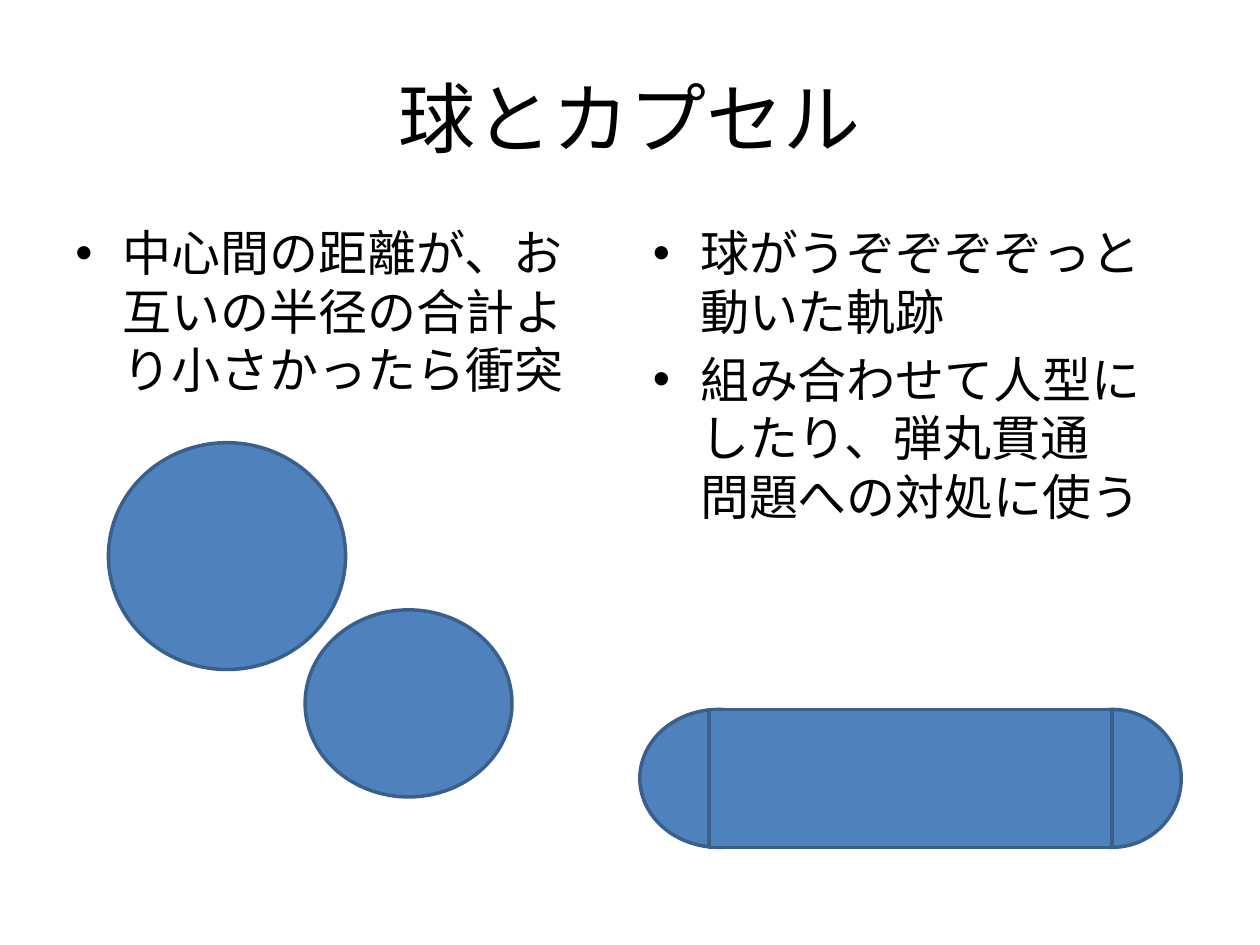
from dataclasses import dataclass

from lxml import etree
from pptx import Presentation
from pptx.dml.color import RGBColor
from pptx.enum.shapes import MSO_SHAPE
from pptx.enum.text import MSO_ANCHOR, PP_ALIGN
from pptx.oxml.ns import qn
from pptx.util import Pt

ELLIPSE = MSO_SHAPE.OVAL
RECTANGLE = MSO_SHAPE.RECTANGLE
CENTER = PP_ALIGN.CENTER
MIDDLE = MSO_ANCHOR.MIDDLE
TITLE_ONLY = 5

FONT = "Noto Sans CJK JP"
BLACK = RGBColor(0x00, 0x00, 0x00)
WHITE = RGBColor(0xFF, 0xFF, 0xFF)
BLUE = RGBColor(0x4F, 0x81, 0xBD)
DARK_BLUE = RGBColor(0x3A, 0x5F, 0x8C)

BODY_SIZE = 28
BODY_LINE = 33.4
BODY_INDENT = 27


@dataclass(frozen=True)
class Box:
    left: float
    top: float
    width: float
    height: float


@dataclass(frozen=True)
class Column:
    box: Box
    bullets: tuple[str, ...]


@dataclass(frozen=True)
class Solid:
    kind: MSO_SHAPE
    box: Box


CAPSULE_TOP = 405.4
CAPSULE_HEIGHT = 78.8

COLUMNS = (
    Column(Box(36, 126, 318, 356.4), ("中心間の距離が、お互いの半径の合計より小さかったら衝突",)),
    Column(
        Box(366, 126, 318, 356.4),
        ("球がうぞぞぞぞっと動いた軌跡", "組み合わせて人型にしたり、弾丸貫通\n問題への対処に使う"),
    ),
)

SOLIDS = (
    Solid(ELLIPSE, Box(62, 253, 135.5, 129.6)),
    Solid(ELLIPSE, Box(174.4, 348.5, 118.2, 106.9)),
    Solid(ELLIPSE, Box(365.6, CAPSULE_TOP, 90, CAPSULE_HEIGHT)),
    Solid(ELLIPSE, Box(596.2, CAPSULE_TOP, CAPSULE_HEIGHT, CAPSULE_HEIGHT)),
    Solid(RECTANGLE, Box(405.2, CAPSULE_TOP, 230.4, CAPSULE_HEIGHT)),
)


def place(shape, box: Box) -> None:
    shape.left, shape.top = Pt(box.left), Pt(box.top)
    shape.width, shape.height = Pt(box.width), Pt(box.height)


def format_runs(paragraph, size: float) -> None:
    for run in paragraph.runs:
        run.font.name = FONT
        run.font.size = Pt(size)
        run.font.color.rgb = BLACK
        east_asian = etree.SubElement(run.font._element, qn("a:ea"))
        east_asian.set("typeface", FONT)


def add_bullet(paragraph) -> None:
    properties = paragraph._p.get_or_add_pPr()
    properties.set("marL", str(Pt(BODY_INDENT)))
    properties.set("indent", str(-Pt(BODY_INDENT)))
    etree.SubElement(properties, qn("a:buFont")).set("typeface", "Arial")
    etree.SubElement(properties, qn("a:buChar")).set("char", "•")


def set_title(slide, text: str) -> None:
    title = slide.shapes.title
    place(title, Box(36, 21.6, 648, 90))
    title.text_frame.text = text
    title.text_frame.vertical_anchor = MIDDLE
    paragraph = title.text_frame.paragraphs[0]
    paragraph.alignment = CENTER
    format_runs(paragraph, 44)


def add_column(slide, column: Column) -> None:
    box = column.box
    shape = slide.shapes.add_textbox(Pt(box.left), Pt(box.top), Pt(box.width), Pt(box.height))
    frame = shape.text_frame
    frame.word_wrap = True
    frame.margin_top = Pt(1.5)
    frame.text = "\n".join("" for _ in column.bullets)
    for paragraph, text in zip(frame.paragraphs, column.bullets):
        paragraph.text = text.replace("\n", "\v")
        paragraph.line_spacing = Pt(BODY_LINE)
        paragraph.space_before = Pt(BODY_SIZE * 0.2)
        add_bullet(paragraph)
        format_runs(paragraph, BODY_SIZE)


def add_solid(slide, solid: Solid) -> None:
    box = solid.box
    shape = slide.shapes.add_shape(
        solid.kind, Pt(box.left), Pt(box.top), Pt(box.width), Pt(box.height)
    )
    shape.shadow.inherit = False
    shape.fill.solid()
    shape.fill.fore_color.rgb = BLUE
    shape.line.color.rgb = DARK_BLUE
    shape.line.width = Pt(2)


def main() -> None:
    presentation = Presentation()
    presentation.slide_width = Pt(720)
    presentation.slide_height = Pt(540)
    slide = presentation.slides.add_slide(presentation.slide_layouts[TITLE_ONLY])
    slide.background.fill.solid()
    slide.background.fill.fore_color.rgb = WHITE
    set_title(slide, "球とカプセル")
    for column in COLUMNS:
        add_column(slide, column)
    for solid in SOLIDS:
        add_solid(slide, solid)
    presentation.save("out.pptx")


if __name__ == "__main__":
    main()
